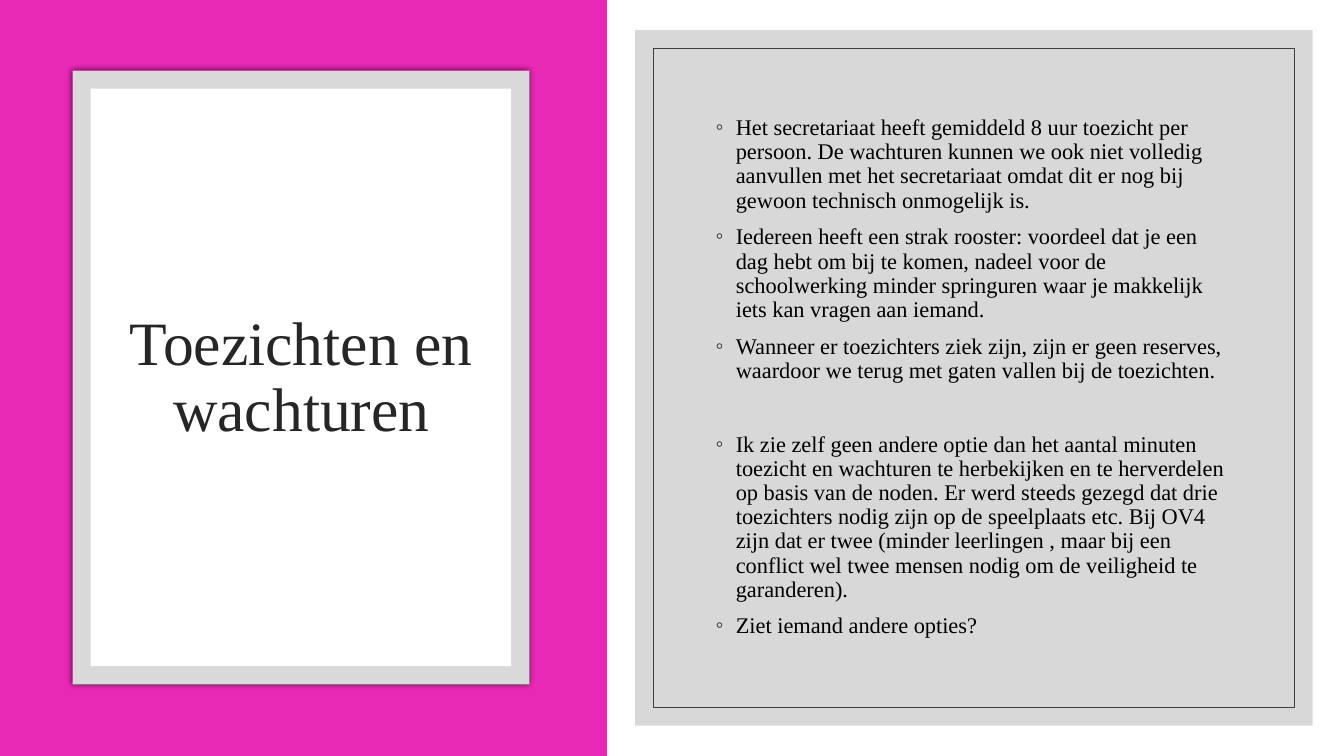
from lxml import etree
from pptx import Presentation
from pptx import util as u
from pptx.dml.color import RGBColor
from pptx.enum import shapes, text
from pptx.oxml import ns

FONT = "Times New Roman"
HUES = {
    "white": "FFFFFF",
    "pink": "E729B5",
    "frame": "D9D9D9",
    "panel": "BFBFBF",
    "line": "404040",
    "title": "262626",
    "body": "000000",
}
TITLE = "Toezichten en wachturen"
POINTS = [
    ("Het secretariaat heeft gemiddeld 8 uur toezicht per persoon. De wachturen "
     "kunnen we ook niet volledig aanvullen met het secretariaat omdat dit er nog "
     "bij gewoon technisch onmogelijk is.", 0),
    ("Iedereen heeft een strak rooster: voordeel dat je een dag hebt om bij te "
     "komen, nadeel voor de schoolwerking minder springuren waar je makkelijk iets "
     "kan vragen aan iemand.", 9),
    ("Wanneer er toezichters ziek zijn, zijn er geen reserves, waardoor we terug "
     "met gaten vallen bij de toezichten.", 9),
    ("Ik zie zelf geen andere optie dan het aantal minuten toezicht en wachturen "
     "te herbekijken en te herverdelen op basis van de noden. Er werd steeds gezegd "
     "dat drie toezichters nodig zijn op de speelplaats etc. Bij OV4 zijn dat er "
     "twee (minder leerlingen , maar bij een conflict wel twee mensen nodig om de "
     "veiligheid te garanderen).", 35.5),
    ("Ziet iemand andere opties?", 9),
]


def color(name):
    return RGBColor.from_string(HUES[name])


def add(parent, tag, **attrs):
    node = etree.SubElement(parent, ns.qn(tag))
    for key, value in attrs.items():
        node.set(key, str(value))
    return node


def inset(box, gap):
    x, y, w, h = box
    return x + gap, y + gap, w - 2 * gap, h - 2 * gap


def rect(slide, box, fill=None, line=None):
    shape = slide.shapes.add_shape(
        shapes.MSO_SHAPE.RECTANGLE, *map(u.Inches, box))
    shape.shadow.inherit = False
    if fill:
        shape.fill.solid()
        shape.fill.fore_color.rgb = color(fill)
    else:
        shape.fill.background()
    if line:
        shape.line.color.rgb = color(line)
        shape.line.width = u.Pt(0.5)
    else:
        shape.line.fill.background()
    return shape


def label(slide, box):
    frame = slide.shapes.add_textbox(*map(u.Inches, box)).text_frame
    frame.word_wrap = True
    frame.vertical_anchor = text.MSO_ANCHOR.MIDDLE
    return frame


def style(para, size, hue):
    para.line_spacing = 0.9
    for run in para.runs:
        run.font.name = FONT
        run.font.size = u.Pt(size)
        run.font.color.rgb = color(hue)


def glow(shape):
    effects = shape._element.spPr.find(ns.qn("a:effectLst"))
    shadow = add(effects, "a:outerShdw", blurRad=u.Pt(4), dist=0, dir=0,
                 algn="ctr", rotWithShape=0)
    black = add(shadow, "a:srgbClr", val="000000")
    add(black, "a:alpha", val=66000)


def bullet(para):
    props = para._p.get_or_add_pPr()
    props.set("marL", str(u.Inches(0.2)))
    props.set("indent", str(u.Inches(-0.2)))
    add(add(props, "a:buClr"), "a:srgbClr", val=HUES["title"])
    add(props, "a:buFont", typeface=FONT)
    add(props, "a:buChar", char="◦")


def title_card(slide, box):
    x, y, w, h = box
    rect(slide, box, "pink")
    card = (x + 0.73, y + 0.7, w - 1.5, h - 1.41)
    glow(rect(slide, card, "frame"))
    rect(slide, inset(card, 0.18), "white")
    frame = label(slide, (x + 1.09, y + 1.3, 3.82, 4.91))
    frame.text = TITLE
    para = frame.paragraphs[0]
    para.alignment = text.PP_ALIGN.CENTER
    style(para, 44, "title")


def body_panel(slide, box):
    x, y, w, h = box
    panel = rect(slide, box, "panel")
    tint = panel._element.spPr.find(".//" + ns.qn("a:srgbClr"))
    add(tint, "a:alpha", val=60000)
    rect(slide, inset(box, 0.18), line="line")
    frame = label(slide, (x + 0.7, y + 0.72, 5.33, 5.45))
    for i, (words, gap) in enumerate(POINTS):
        para = frame.paragraphs[0] if i == 0 else frame.add_paragraph()
        para.text = words
        bullet(para)
        style(para, 16, "body")
        para.space_before = u.Pt(gap)


def main():
    deck = Presentation()
    deck.slide_width = u.Inches(13.33)
    deck.slide_height = u.Inches(7.5)
    slide = deck.slides.add_slide(deck.slide_layouts[6])
    rect(slide, (0, 0, 13.33, 7.5), "white")
    title_card(slide, (-0.01, 0, 6.03, 7.5))
    body_panel(slide, (6.3, 0.3, 6.72, 6.9))
    deck.save("out.pptx")


if __name__ == "__main__":
    main()
